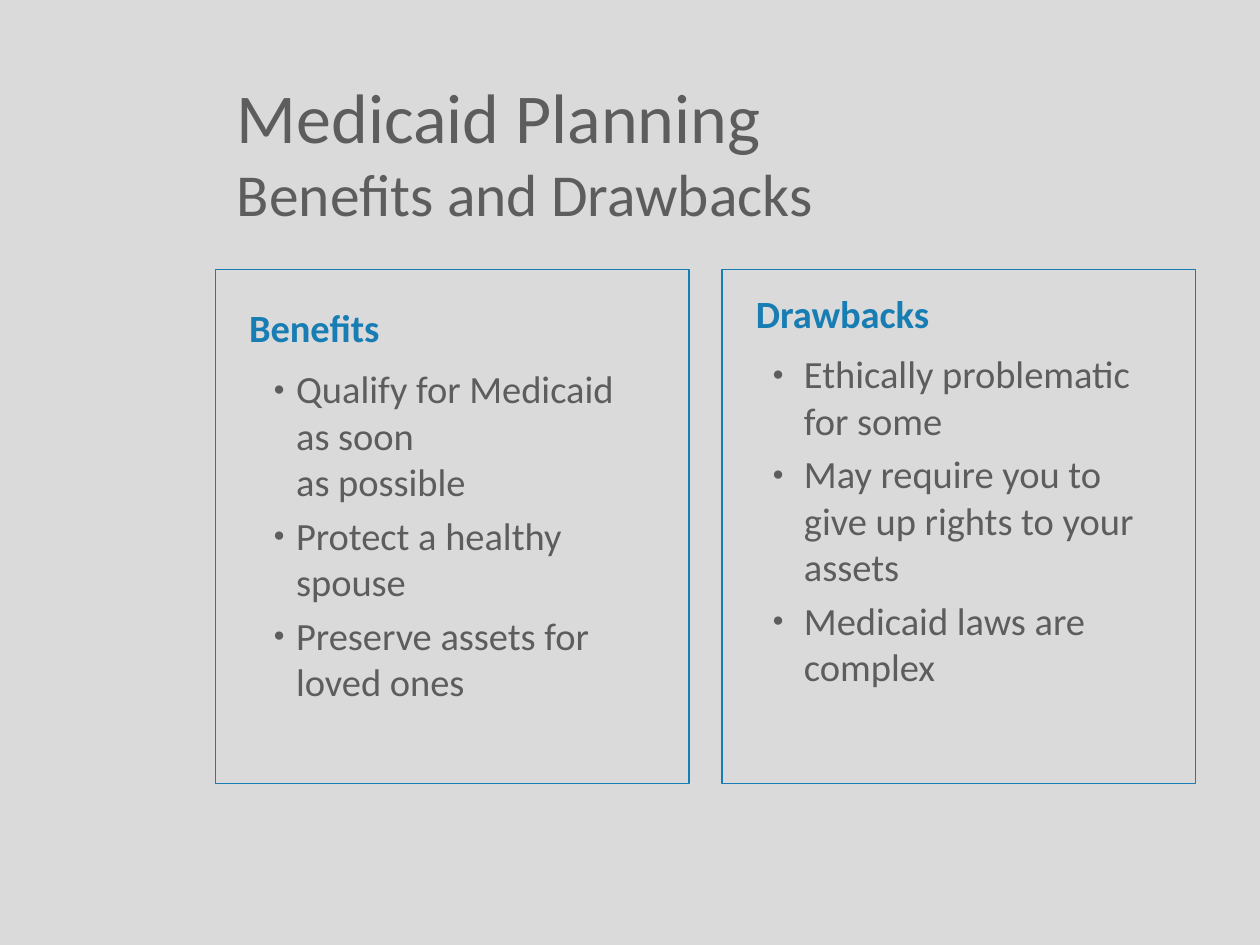
from lxml.etree import SubElement
from pptx import Presentation
from pptx.dml.color import RGBColor
from pptx.enum.shapes import MSO_SHAPE
from pptx.enum.text import MSO_ANCHOR, MSO_AUTO_SIZE, PP_ALIGN
from pptx.oxml.ns import qn
from pptx.util import Pt

BACKGROUND = RGBColor(0xDA, 0xDA, 0xDA)
GREY = RGBColor(0x5D, 0x5D, 0x5D)
BLUE = RGBColor(0x17, 0x7D, 0xB3)
FONT = "Calibri"
TEXT_SIZE = 22
PANEL_TOP, PANEL_WIDTH, PANEL_HEIGHT = 154, 270.7, 293.8


def place(shape, left, top, width, height):
    """Move a shape to a box given in points."""
    shape.left, shape.top = Pt(left), Pt(top)
    shape.width, shape.height = Pt(width), Pt(height)


def style(font, size, color, bold=False):
    """Give a font its face, size, colour and weight."""
    font.name, font.size, font.bold = FONT, Pt(size), bold
    font.color.rgb = color


def add_bullet(paragraph, indent):
    """Give a paragraph a half-size round bullet with a hanging indent."""
    properties = paragraph._p.get_or_add_pPr()
    properties.set("marL", str(Pt(indent)))
    properties.set("indent", str(-Pt(indent)))
    color = SubElement(properties, qn("a:buClr"))
    SubElement(color, qn("a:srgbClr"), val=str(GREY))
    SubElement(properties, qn("a:buSzPct"), val="50000")
    SubElement(properties, qn("a:buChar"), char="●")


def fill_title(title, left, top, width, height):
    """Write the two-line title into its placeholder."""
    place(title, left, top, width, height)
    frame = title.text_frame
    frame.auto_size = MSO_AUTO_SIZE.NONE
    frame.vertical_anchor = MSO_ANCHOR.MIDDLE
    frame.text = "Medicaid Planning\vBenefits and Drawbacks"
    paragraph = frame.paragraphs[0]
    paragraph.alignment = PP_ALIGN.LEFT
    for run, size in zip(paragraph.runs, (40, 34)):
        style(run.font, size, GREY)


def fill_list(body, items, indent, left, top, width, height):
    """Write a bulleted list into a body placeholder."""
    place(body, left, top, width, height)
    frame = body.text_frame
    frame.auto_size = MSO_AUTO_SIZE.NONE
    frame.text = "\n".join(items)
    for index, paragraph in enumerate(frame.paragraphs):
        add_bullet(paragraph, indent)
        paragraph.space_before = Pt(0.2 * TEXT_SIZE if index else 0)
        for run in paragraph.runs:
            style(run.font, TEXT_SIZE, GREY)


def add_panel(slide, heading, heading_top, left, top, width, height):
    """Draw an outlined panel with its heading."""
    panel = slide.shapes.add_shape(
        MSO_SHAPE.RECTANGLE, Pt(left), Pt(top), Pt(width), Pt(height))
    panel.shadow.inherit = False
    panel.fill.background()
    panel.line.color.rgb = BLUE
    panel.line.width = Pt(0.75)
    label = slide.shapes.add_textbox(
        Pt(left + 12.2), Pt(heading_top), Pt(190.8), Pt(33.8))
    label.text_frame.word_wrap = True
    label.text_frame.text = heading
    style(label.text_frame.paragraphs[0].runs[0].font, TEXT_SIZE, BLUE, True)


def main():
    """Build the slide and save it."""
    presentation = Presentation()
    presentation.slide_width, presentation.slide_height = Pt(720), Pt(540)
    slide = presentation.slides.add_slide(presentation.slide_layouts[3])
    slide.background.fill.solid()
    slide.background.fill.fore_color.rgb = BACKGROUND

    title, benefits, drawbacks = slide.placeholders
    fill_title(title, 128.2, 38.2, 488.9, 95.8)
    fill_list(benefits, ["Qualify for Medicaid as soon \vas possible",
                         "Protect a healthy spouse",
                         "Preserve assets for loved ones"],
              13, 149, 205.2, 229, 130.3)
    fill_list(drawbacks, ["Ethically problematic for some",
                          "May require you to give up rights to your assets",
                          "Medicaid laws are complex"],
              18, 434.2, 196.6, 236.9, 195.8)
    for heading, heading_top, left in (("Benefits", 170, 123),
                                       ("Drawbacks", 162, 412.6)):
        add_panel(slide, heading, heading_top,
                  left, PANEL_TOP, PANEL_WIDTH, PANEL_HEIGHT)
    presentation.save("out.pptx")


if __name__ == "__main__":
    main()
